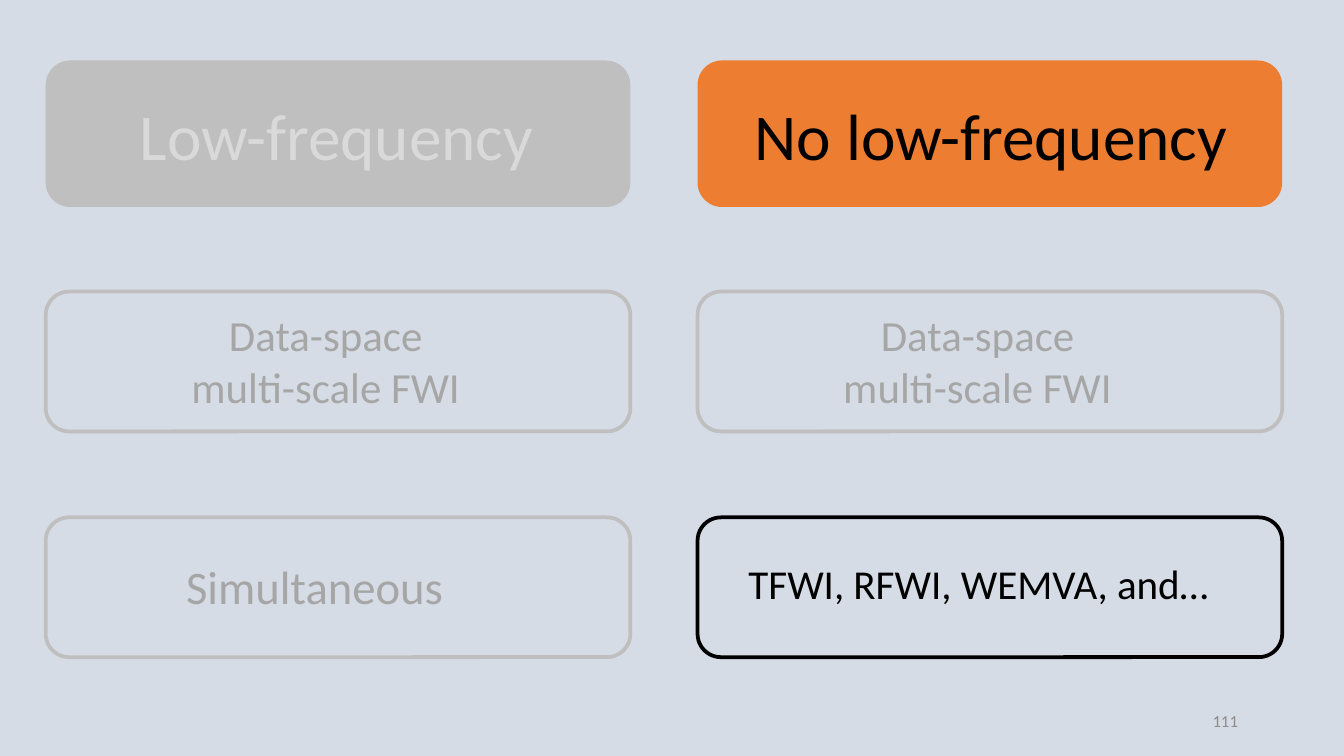
import pptx
import pptx.dml.color
import pptx.enum.shapes
import pptx.enum.text
import pptx.util

Inches = pptx.util.Inches
ALIGN = pptx.enum.text.PP_ALIGN
ANCHOR = pptx.enum.text.MSO_ANCHOR
COLORS = {
    "background": "D6DCE5",
    "accent": "ED7D31",
    "muted": "BFBFBF",
    "muted_text": "A6A6A6",
    "pale_text": "D9D9D9",
    "number": "8C8C8C",
    "active": "000000",
}


class SlideBuilder:
    """Hold the style and current slide, and add its boxes and labels."""

    def __init__(self, slide, font="Calibri"):
        self.slide = slide
        self.font = font

    def color(self, name):
        return pptx.dml.color.RGBColor.from_string(COLORS[name])

    def background(self, name):
        fill = self.slide.background.fill
        fill.solid()
        fill.fore_color.rgb = self.color(name)

    def box(self, left, top, height, fill=None, line=None):
        sp = self.slide.shapes.add_shape(
            pptx.enum.shapes.MSO_SHAPE.ROUNDED_RECTANGLE,
            Inches(left), Inches(top), Inches(4.35), Inches(height))
        sp.shadow.inherit = False
        if fill:
            sp.fill.solid()
            sp.fill.fore_color.rgb = self.color(fill)
        else:
            sp.fill.background()
        if line:
            sp.line.color.rgb = self.color(line)
            sp.line.width = pptx.util.Pt(2)
        else:
            sp.line.fill.background()

    def label(self, lines, left, top, width, height, size, color,
              align=ALIGN.CENTER, anchor=ANCHOR.TOP):
        sp = self.slide.shapes.add_textbox(
            Inches(left), Inches(top), Inches(width), Inches(height))
        tf = sp.text_frame
        tf.word_wrap = True
        tf.vertical_anchor = anchor
        for i, line in enumerate(lines):
            p = tf.add_paragraph() if i else tf.paragraphs[0]
            p.alignment = align
            r = p.add_run()
            r.text = line
            r.font.name = self.font
            r.font.size = pptx.util.Pt(size)
            r.font.color.rgb = self.color(color)


def main():
    prs = pptx.Presentation()
    prs.slide_width = Inches(10)
    prs.slide_height = Inches(10 * 9 / 16)
    s = SlideBuilder(prs.slides.add_slide(prs.slide_layouts[6]))
    s.background("background")

    columns = [
        (0.34, 0.42, "Low-frequency", "muted", "pale_text", "muted"),
        (5.19, 5.29, "No low-frequency", "accent", "active", "active"),
    ]
    for left, text_left, heading, fill, text_color, outline in columns:
        s.box(left, 0.45, 1.09, fill=fill)
        s.label([heading], text_left, 0.66, 4.17, 0.69, 35, text_color)
        s.box(left, 2.17, 1.04, line="muted")
        s.label(["Data-space", "multi-scale FWI"],
                left + 0.23, 2.25, 3.71, 0.88, 23, "muted_text")
        s.box(left, 3.85, 1.04, line=outline)

    s.label(["Simultaneous"], 0.56, 4.1, 3.56, 0.52, 25, "muted_text")
    s.label(["TFWI, RFWI, WEMVA, and…"], 5.3, 4.11, 3.96, 0.47, 22, "active")
    s.label(["111"], 7.06, 5.21, 2.25, 0.3, 9, "number",
            ALIGN.RIGHT, ANCHOR.MIDDLE)
    prs.save("out.pptx")


if __name__ == "__main__":
    main()
